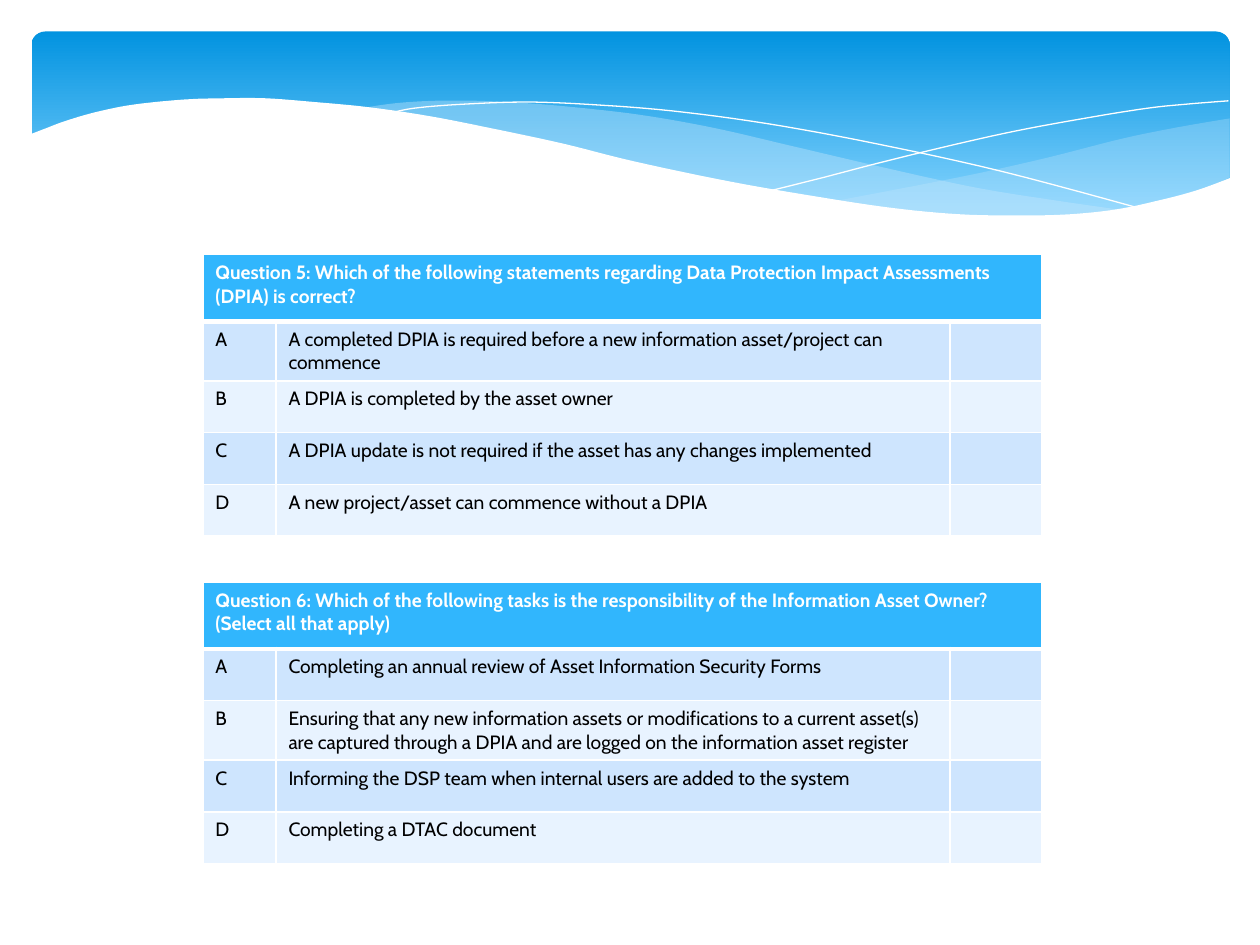
from dataclasses import dataclass
from typing import NamedTuple

from lxml import etree
from pptx import Presentation
from pptx.dml.color import RGBColor
from pptx.enum.shapes import MSO_SHAPE
from pptx.oxml.ns import qn
from pptx.util import Inches, Pt

ROUNDED = MSO_SHAPE.ROUNDED_RECTANGLE
Points = list[tuple[float, float]]


@dataclass(frozen=True)
class Theme:
    font: str = "Cabin"
    text_size: float = 11
    white: str = "FFFFFF"
    black: str = "000000"
    header: str = "31B6FD"
    bands: tuple[str, str] = ("CEE5FE", "E8F3FF")
    banner_top: str = "0293E0"
    banner_bottom: str = "83D3FE"
    wave: str = "C6E7FC"
    border: float = 1
    header_border: float = 3


THEME = Theme()


class Wave(NamedTuple):
    """Smooth curves joined end to end; filled when a fill is given, else a white line."""
    curves: list[Points]
    fill: str | None = None
    opacity: int = 100


class Question(NamedTuple):
    top: float
    prompt: str
    answers: list[str]


WAVES = [
    Wave([
        [(9.76, 0.94), (9.35, 1.01), (8.91, 1.1), (8.32, 1.25), (7.79, 1.37),
         (7.29, 1.47), (6.61, 1.6)],
        [(6.61, 1.6), (7.05, 1.65), (7.57, 1.7), (8.03, 1.72), (8.44, 1.71),
         (8.81, 1.67), (9.21, 1.6), (9.49, 1.52), (9.76, 1.41)],
    ], THEME.wave, 29),
    Wave([
        [(8.93, 1.67), (8.37, 1.59), (7.75, 1.49), (7.06, 1.34), (6.29, 1.16),
         (5.69, 1.02), (5.14, 0.92), (4.65, 0.86), (4.2, 0.82), (3.8, 0.8),
         (3.44, 0.8), (3.13, 0.82), (2.86, 0.86)],
        [(2.86, 0.86), (3.42, 0.94), (4.04, 1.06), (4.91, 1.26), (5.66, 1.43),
         (6.34, 1.56), (6.95, 1.65), (7.48, 1.7), (7.96, 1.73), (8.38, 1.72),
         (8.93, 1.67)],
    ], THEME.wave, 40),
    Wave([[(3.09, 0.9), (3.28, 0.86), (3.63, 0.83), (4.16, 0.81), (4.69, 0.83),
           (5.33, 0.88), (6.08, 0.98), (6.95, 1.14), (7.95, 1.36), (9.07, 1.66)]]),
    Wave([[(6.13, 1.51), (6.53, 1.41), (6.95, 1.3), (7.48, 1.17), (8.06, 1.04),
           (8.66, 0.93), (9.1, 0.86), (9.38, 0.83), (9.75, 0.8)]]),
    Wave([
        [(9.77, 1.41), (9.5, 1.51), (9.2, 1.59), (8.87, 1.66), (8.5, 1.7),
         (8.09, 1.71), (7.61, 1.7), (7.08, 1.65), (6.48, 1.56), (5.79, 1.44),
         (5.03, 1.28), (4.47, 1.14), (3.91, 1.02), (3.4, 0.92), (2.92, 0.85),
         (2.5, 0.81), (2.11, 0.78), (1.77, 0.78), (1.46, 0.79), (1.06, 0.83),
         (0.76, 0.89), (0.52, 0.96), (0.36, 1.02), (0.23, 1.07)],
        [(0.23, 2.24), (9.77, 2.24)],
    ], THEME.white),
]

QUESTIONS = [
    Question(2.02, "Question 5: Which of the following statements regarding Data Protection "
             "Impact Assessments (DPIA) is correct?", [
                 "A completed DPIA is required before a new information asset/project can commence",
                 "A DPIA is completed by the asset owner",
                 "A DPIA update is not required if the asset has any changes implemented",
                 "A new project/asset can commence without a DPIA"]),
    Question(4.62, "Question 6: Which of the following tasks is the responsibility of the "
             "Information Asset Owner? (Select all that apply)", [
                 "Completing an annual review of Asset Information Security Forms",
                 "Ensuring that any new information assets or modifications to a current asset(s) "
                 "are captured through a DPIA and are logged on the information asset register",
                 "Informing the DSP team when internal users are added to the system",
                 "Completing a DTAC document"]),
]
TABLE_LEFT = 1.61
COLUMN_WIDTHS = (0.58, 5.35, 0.73)
HEADER_HEIGHT, ANSWER_HEIGHT = 0.53, 0.41


def rgb(value: str) -> RGBColor:
    return RGBColor.from_string(value)


def smooth(anchors: Points, steps: int = 6) -> Points:
    """Catmull-Rom curve through the anchors."""
    padded = [anchors[0], *anchors, anchors[-1]]
    curve = [anchors[0]]
    for a, b, c, d in zip(padded, padded[1:], padded[2:], padded[3:]):
        for step in range(1, steps + 1):
            t = step / steps
            curve.append(tuple(
                q + t / 2 * (r - p + t * (2 * p - 5 * q + 4 * r - s
                                          + t * (3 * (q - r) + s - p)))
                for p, q, r, s in zip(a, b, c, d)))
    return curve


def add_banner(slide) -> None:
    banner = slide.shapes.add_shape(
        ROUNDED, Inches(0.25), Inches(0.25), Inches(9.51), Inches(1.56))
    banner.adjustments[0] = 0.07
    banner.shadow.inherit = False
    banner.line.fill.background()
    banner.fill.gradient()
    banner.fill.gradient_angle = 270
    stops = ((0, THEME.banner_top), (0.9, THEME.banner_bottom))
    for stop, (position, color) in zip(banner.fill.gradient_stops, stops):
        stop.position = position
        stop.color.rgb = rgb(color)


def add_wave(slide, wave: Wave) -> None:
    outline = [(Inches(x), Inches(y)) for curve in wave.curves for x, y in smooth(curve)]
    builder = slide.shapes.build_freeform(*outline[0])
    builder.add_line_segments(outline[1:], close=wave.fill is not None)
    shape = builder.convert_to_shape()
    shape.shadow.inherit = False
    if wave.fill is None:
        shape.fill.background()
        shape.line.color.rgb = rgb(THEME.white)
        shape.line.width = Pt(0)
        return
    shape.line.fill.background()
    shape.fill.solid()
    shape.fill.fore_color.rgb = rgb(wave.fill)
    if wave.opacity < 100:
        color = shape._element.spPr.find(qn("a:solidFill"))[0]
        etree.SubElement(color, qn("a:alpha"), val=str(wave.opacity * 1000))


def add_borders(cell, top: float, bottom: float) -> None:
    properties = cell._tc.get_or_add_tcPr()
    widths = {"L": THEME.border, "R": THEME.border, "T": top, "B": bottom}
    for side, width in widths.items():
        line = etree.SubElement(properties, qn(f"a:ln{side}"), w=str(Pt(width)))
        fill = etree.SubElement(line, qn("a:solidFill"))
        etree.SubElement(fill, qn("a:srgbClr"), val=THEME.white)


def write_cell(cell, text: str, color: str, bold: bool) -> None:
    if not text:
        return
    run = cell.text_frame.paragraphs[0].add_run()
    run.text = text
    text_format = {"name": THEME.font, "size": Pt(THEME.text_size), "bold": bold}
    for attribute, value in text_format.items():
        setattr(run.font, attribute, value)
    run.font.color.rgb = rgb(color)


def add_question(slide, question: Question) -> None:
    rows = [(question.prompt, "", "")]
    rows += [(letter, answer, "") for letter, answer in zip("ABCD", question.answers)]
    heights = [HEADER_HEIGHT] + [ANSWER_HEIGHT] * len(question.answers)
    table = slide.shapes.add_table(
        len(rows), len(COLUMN_WIDTHS), Inches(TABLE_LEFT), Inches(question.top),
        Inches(sum(COLUMN_WIDTHS)), Inches(sum(heights))).table
    for column, width in zip(table.columns, COLUMN_WIDTHS):
        column.width = Inches(width)
    table.cell(0, 0).merge(table.cell(0, len(COLUMN_WIDTHS) - 1))
    for index, (row, texts, height) in enumerate(zip(table.rows, rows, heights)):
        row.height = Inches(height)
        is_header = index == 0
        background = THEME.header if is_header else THEME.bands[(index - 1) % 2]
        top = THEME.header_border if index == 1 else THEME.border
        bottom = THEME.header_border if is_header else THEME.border
        for cell, text in zip(row.cells, texts):
            add_borders(cell, top, bottom)
            cell.fill.solid()
            cell.fill.fore_color.rgb = rgb(background)
            write_cell(cell, text, THEME.white if is_header else THEME.black, is_header)


def main() -> None:
    presentation = Presentation()
    presentation.slide_width, presentation.slide_height = Inches(10), Inches(7.5)
    slide = presentation.slides.add_slide(presentation.slide_layouts[6])
    add_banner(slide)
    for wave in WAVES:
        add_wave(slide, wave)
    for question in QUESTIONS:
        add_question(slide, question)
    presentation.save("out.pptx")


if __name__ == "__main__":
    main()
